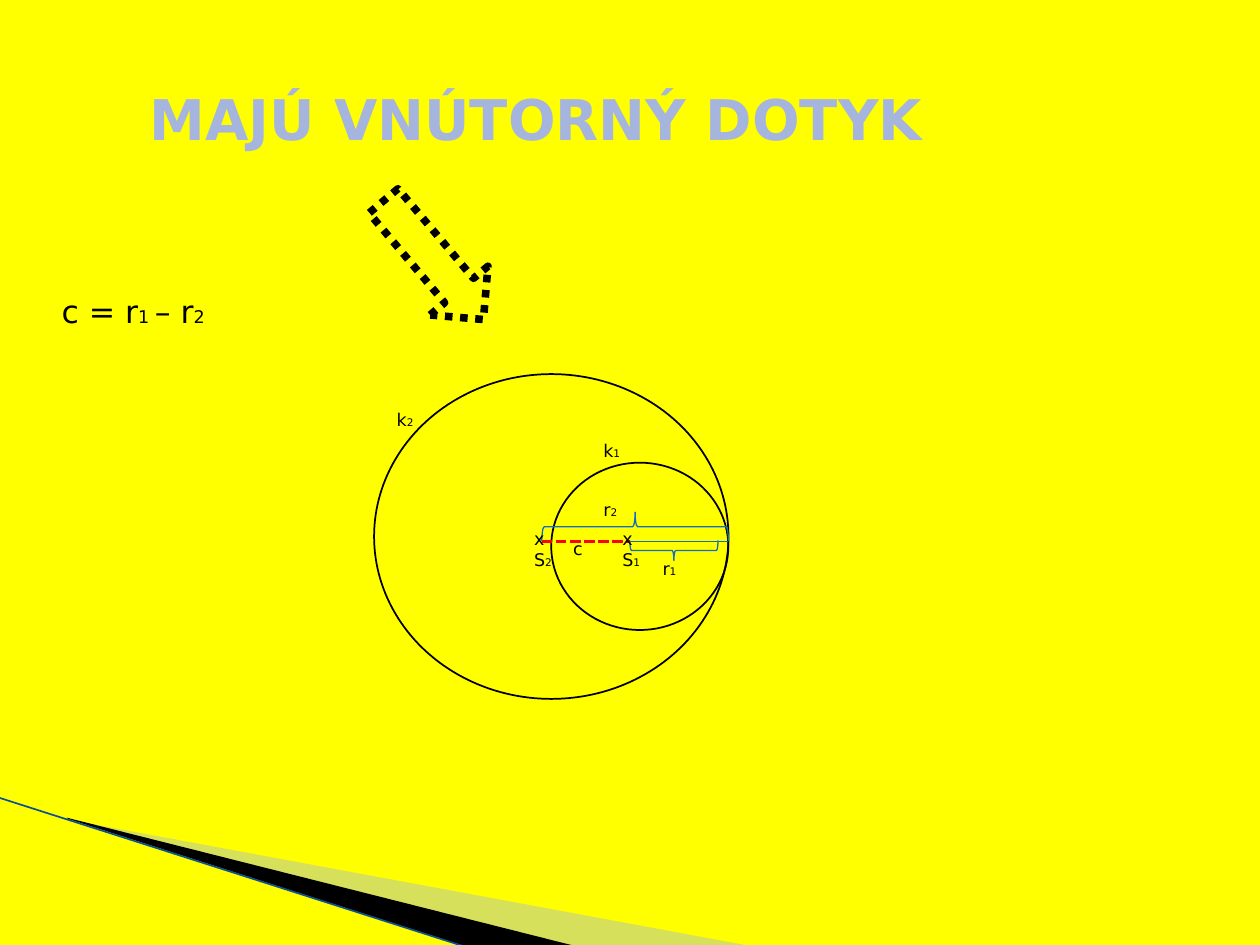
from lxml import etree
from pptx import Presentation
from pptx import util as u
from pptx.dml.color import RGBColor
from pptx.enum import dml, shapes, text
from pptx.oxml.ns import qn

FONT = "DejaVu Sans"
Pt = u.Pt


def color(hex_string):
    return RGBColor.from_string(hex_string)


def add_label(left, top, width, height, lines):
    """Each line is a list of (words, size) runs."""
    box = slide.shapes.add_textbox(Pt(left), Pt(top), Pt(width), Pt(height))
    box.text_frame.word_wrap = True
    for index, runs in enumerate(lines):
        if index:
            paragraph = box.text_frame.add_paragraph()
        else:
            paragraph = box.text_frame.paragraphs[0]
        paragraph.font.name = FONT
        paragraph.font.color.rgb = color("000000")
        for words, size in runs:
            run = paragraph.add_run()
            run.text = words
            run.font.size = Pt(size)


presentation = Presentation()
presentation.slide_width, presentation.slide_height = Pt(720), Pt(540)
slide = presentation.slides.add_slide(presentation.slide_layouts[5])
slide.background.fill.solid()
slide.background.fill.fore_color.rgb = color("FFFF00")

# Wedges in the bottom corner
wedges = [
    ("9DB2E1", 40, [(39.6, 468.5), (428.4, 540.5), (328.3, 540.5), (39.6, 468)]),
    ("000000", 100, [(38.2, 467.3), (329, 540.7), (267.8, 541.4), (38.9, 468)]),
]
for fill, opacity, points in wedges:
    builder = slide.shapes.build_freeform(Pt(points[0][0]), Pt(points[0][1]))
    builder.add_line_segments([(Pt(x), Pt(y)) for x, y in points[1:]], close=True)
    wedge = builder.convert_to_shape()
    wedge.shadow.inherit = False
    wedge.fill.solid()
    wedge.fill.fore_color.rgb = color(fill)
    wedge.line.fill.background()
    if opacity < 100:
        rgb = wedge.fill._xPr.find(qn("a:solidFill")).find(qn("a:srgbClr"))
        etree.SubElement(rgb, qn("a:alpha")).set("val", str(opacity * 1000))

# Title
title = slide.shapes.title
title.left, title.top, title.width, title.height = Pt(67.7), Pt(44.6), Pt(477.4), Pt(46)
title.text_frame.word_wrap = False
title.text_frame.vertical_anchor = text.MSO_ANCHOR.MIDDLE
title.text_frame.text = "MAJÚ VNÚTORNÝ DOTYK"
paragraph = title.text_frame.paragraphs[0]
paragraph.alignment = text.PP_ALIGN.CENTER
paragraph.font.name = FONT
paragraph.font.size = Pt(32)
paragraph.font.bold = True
paragraph.font.color.rgb = color("A6B5DE")

# Arrow, circles and braces: kind, place, rotation, fill, line colour, line width
kinds = shapes.MSO_SHAPE
outlines = [
    (kinds.DOWN_ARROW, (226.1, 104.4, 43.2, 88.6), 319.9, "FFFF00", "000000", 4.33),
    (kinds.FLOWCHART_CONNECTOR, (213.8, 213.8, 202.5, 185.6), 0, None, "000000", 1),
    (kinds.FLOWCHART_CONNECTOR, (315, 264.4, 101.2, 95.6), 0, None, "000000", 1),
    (kinds.LEFT_BRACE, (379.4, 289.4, 11.5, 50.4), 270, None, "0F6FC6", 0.75),
    (kinds.LEFT_BRACE, (354.6, 247.7, 16.6, 106.6), 90, None, "0F6FC6", 0.75),
]
for kind, place, rotation, fill, line, width in outlines:
    shape = slide.shapes.add_shape(kind, *map(Pt, place))
    shape.shadow.inherit = False
    shape.rotation = rotation
    if fill:
        shape.fill.solid()
        shape.fill.fore_color.rgb = color(fill)
    else:
        shape.fill.background()
    shape.line.color.rgb = color(line)
    shape.line.width = Pt(width)
    if kind == kinds.DOWN_ARROW:
        shape.line.dash_style = dml.MSO_LINE.ROUND_DOT

# Corner edge, distance between the centres, radius
lines = [
    ((-0.7, 455.8), (267.1, 541.4), "0B5292", 0.95, None),
    ((309.6, 309.4), (360, 309.4), "FF0000", 2, dml.MSO_LINE.SQUARE_DOT),
    ((360, 309.4), (416.2, 309.4), "0F6FC6", 0.75, None),
]
for start, end, line, width, dash in lines:
    connector = slide.shapes.add_connector(
        shapes.MSO_CONNECTOR.STRAIGHT, *map(Pt, start + end))
    connector.line.color.rgb = color(line)
    connector.line.width = Pt(width)
    if dash:
        connector.line.dash_style = dash
        connector.line._ln.find(qn("a:prstDash")).set("val", "sysDash")
    etree.SubElement(connector._element.spPr, qn("a:effectLst"))

# Centres
for left, width, number in [(348.5, 39.6, "1"), (298.1, 56.2, "2")]:
    add_label(left, 298.1, width, 31.7, [[("x", 10)], [("S", 10), (number, 6)]])

# Circle, radius and distance names
names = [
    (320.4, 303.8, 28.1, "c", ""),
    (371.5, 315.4, 39.6, "r", "1"),
    (337.7, 281.5, 44.6, "r", "2"),
    (337.7, 247.7, 84.2, "k", "1"),
    (219.6, 230.4, 44.6, "k", "2"),
]
for left, top, width, name, number in names:
    runs = [(name, 10), (number, 6)] if number else [(name, 10)]
    add_label(left, top, width, 19.4, [runs])

# Formula
add_label(28.1, 163.4, 129.6, 28.8,
          [[("c = r", 18), ("1 ", 10), ("– r", 18), ("2", 10)]])

presentation.save("out.pptx")
